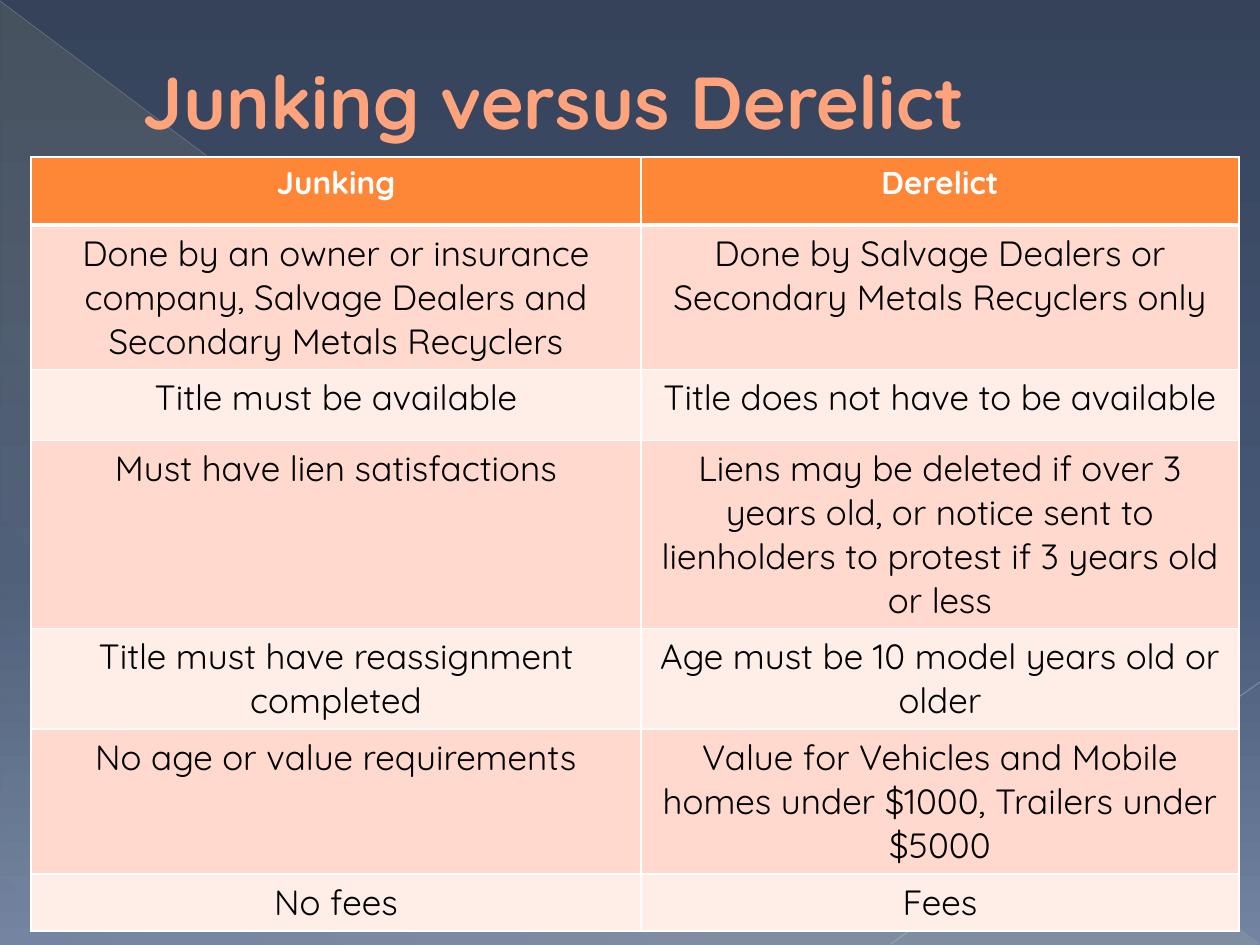
from dataclasses import dataclass

from lxml import etree
from pptx import Presentation
from pptx.dml.color import RGBColor
from pptx.enum.shapes import MSO_CONNECTOR, MSO_SHAPE
from pptx.enum.text import MSO_ANCHOR, PP_ALIGN
from pptx.oxml.ns import qn
from pptx.util import Pt

# Content
TITLE = "Junking versus Derelict"
ROWS = [
    ("Junking", "Derelict"),
    ("Done by an owner or insurance company, Salvage Dealers and Secondary Metals Recyclers",
     "Done by Salvage Dealers or Secondary Metals Recyclers only"),
    ("Title must be available", "Title does not have to be available"),
    ("Must have lien satisfactions",
     "Liens may be deleted if over 3 years old, or notice sent to lienholders "
     "to protest if 3 years old or less"),
    ("Title must have reassignment completed", "Age must be 10 model years old or older"),
    ("No age or value requirements",
     "Value for Vehicles and Mobile homes under $1000, Trailers under $5000"),
    ("No fees", "Fees"),
]

# Layout in px
SLIDE_SIZE = (1260, 945)
TITLE_BOX = (63, 21, 1134, 158)
TITLE_INDENT = 67
TABLE_ORIGIN = (31, 157)
COLUMN_WIDTHS = (610, 598)
ROW_HEIGHTS = (68, 144, 71, 188, 100, 145, 57)
TRIANGLE_BOX = (1, 2, 1258, 943)

CENTER = PP_ALIGN.CENTER
MIDDLE = MSO_ANCHOR.MIDDLE
TOP = MSO_ANCHOR.TOP
STRAIGHT = MSO_CONNECTOR.STRAIGHT
RIGHT_TRIANGLE = MSO_SHAPE.RIGHT_TRIANGLE


@dataclass(frozen=True)
class Theme:
    font: str = "Quicksand"
    title_size: int = 42
    header_size: int = 18
    body_size: int = 20
    title: str = "FFA37C"
    title_outline: str = "B05D26"
    header_text: str = "FFFFFF"
    body_text: str = "000000"
    header_fill: str = "FE8637"
    bands: tuple = ("FFD9CE", "FFEDE8")
    border: str = "FFFFFF"
    # Gradient stops: position %, colour, opacity %
    background: tuple = ((0, "35425A", 100), (60, "465877", 100), (100, "7383A2", 100))
    triangle: tuple = ((0, "FFF39D", 10), (70, "FFF39D", 8), (100, "FFF39D", 1))


THEME = Theme()

# Background lines: start, end, colour, width in pt, opacity %
LINES = [
    ((0, 1), (1259, 944), "BABDC4", 0.39, 35),
    ((1260, 682), (891, 944), "C1C4CA", 0.47, 45),
]


def px(value):
    return round(value * 914400 / 126)


def box(values):
    return [px(value) for value in values]


def add_color(parent, color, opacity=100):
    element = etree.SubElement(parent, qn("a:srgbClr"), val=color)
    if opacity < 100:
        etree.SubElement(element, qn("a:alpha"), val=str(opacity * 1000))


def set_gradient(fill, owner, stops, clockwise_angle):
    fill.gradient()
    fill.gradient_angle = 360 - clockwise_angle
    stop_list = owner.find(".//" + qn("a:gsLst"))
    for stop in list(stop_list):
        stop_list.remove(stop)
    for position, color, opacity in stops:
        stop = etree.SubElement(stop_list, qn("a:gs"), pos=str(position * 1000))
        add_color(stop, color, opacity)


def add_outline(parent, tag, color, width):
    line = etree.SubElement(parent, qn(tag), w=str(Pt(width)))
    add_color(etree.SubElement(line, qn("a:solidFill")), color)
    return line


def add_run(paragraph, text, size, color, bold):
    run = paragraph.add_run()
    run.text = text
    run.font.name = THEME.font
    run.font.size = Pt(size)
    run.font.bold = bold
    run.font.color.rgb = RGBColor.from_string(color)
    return run


def add_backdrop(slide):
    set_gradient(slide.background.fill, slide.element, THEME.background, 90)
    triangle = slide.shapes.add_shape(RIGHT_TRIANGLE, *box(TRIANGLE_BOX))
    triangle.shadow.inherit = False
    triangle.line.fill.background()
    set_gradient(triangle.fill, triangle.element, THEME.triangle, 133)
    parts = [triangle]
    for start, end, color, width, opacity in LINES:
        line = slide.shapes.add_connector(STRAIGHT, *box(start + end))
        line.line.width = Pt(width)
        line.line.color.rgb = RGBColor.from_string(color)
        color_element = line.element.spPr.find(".//" + qn("a:srgbClr"))
        etree.SubElement(color_element, qn("a:alpha"), val=str(opacity * 1000))
        etree.SubElement(line.element.spPr, qn("a:effectLst"))
        parts.append(line)
    # Keep the backdrop behind the title placeholder
    tree = triangle.element.getparent()
    for index, part in enumerate(parts, start=2):
        tree.insert(index, part.element)


def add_title(slide):
    title = slide.shapes.title
    title.left, title.top, title.width, title.height = box(TITLE_BOX)
    title.text_frame.vertical_anchor = MIDDLE
    title.text_frame.word_wrap = True
    paragraph = title.text_frame.paragraphs[0]
    paragraph.alignment = PP_ALIGN.LEFT
    properties = paragraph._p.get_or_add_pPr()
    properties.set("marL", str(px(TITLE_INDENT)))
    properties.set("indent", "0")
    run = add_run(paragraph, TITLE, THEME.title_size, THEME.title, True)
    run_properties = run.font._element
    run_properties.insert(0, add_outline(run_properties, "a:ln", THEME.title_outline, 0.5))


def format_cell(cell, text, row):
    header = row == 0
    cell.vertical_anchor = TOP
    properties = cell._tc.get_or_add_tcPr()
    for side in "LRTB":
        heavy = (row, side) in ((0, "B"), (1, "T"))
        add_outline(properties, f"a:ln{side}", THEME.border, 3 if heavy else 1)
    fill = THEME.header_fill if header else THEME.bands[(row - 1) % 2]
    cell.fill.solid()
    cell.fill.fore_color.rgb = RGBColor.from_string(fill)
    paragraph = cell.text_frame.paragraphs[0]
    paragraph.alignment = CENTER
    size = THEME.header_size if header else THEME.body_size
    color = THEME.header_text if header else THEME.body_text
    add_run(paragraph, text, size, color, header)


def add_comparison(slide):
    frame = (*TABLE_ORIGIN, sum(COLUMN_WIDTHS), sum(ROW_HEIGHTS))
    table = slide.shapes.add_table(len(ROWS), len(COLUMN_WIDTHS), *box(frame)).table
    for column, width in zip(table.columns, COLUMN_WIDTHS):
        column.width = px(width)
    for row, (texts, height) in enumerate(zip(ROWS, ROW_HEIGHTS)):
        table.rows[row].height = px(height)
        for column, text in enumerate(texts):
            format_cell(table.cell(row, column), text, row)


def main():
    presentation = Presentation()
    presentation.slide_width, presentation.slide_height = box(SLIDE_SIZE)
    slide = presentation.slides.add_slide(presentation.slide_layouts[5])
    add_backdrop(slide)
    add_title(slide)
    add_comparison(slide)
    presentation.save("out.pptx")


if __name__ == "__main__":
    main()
